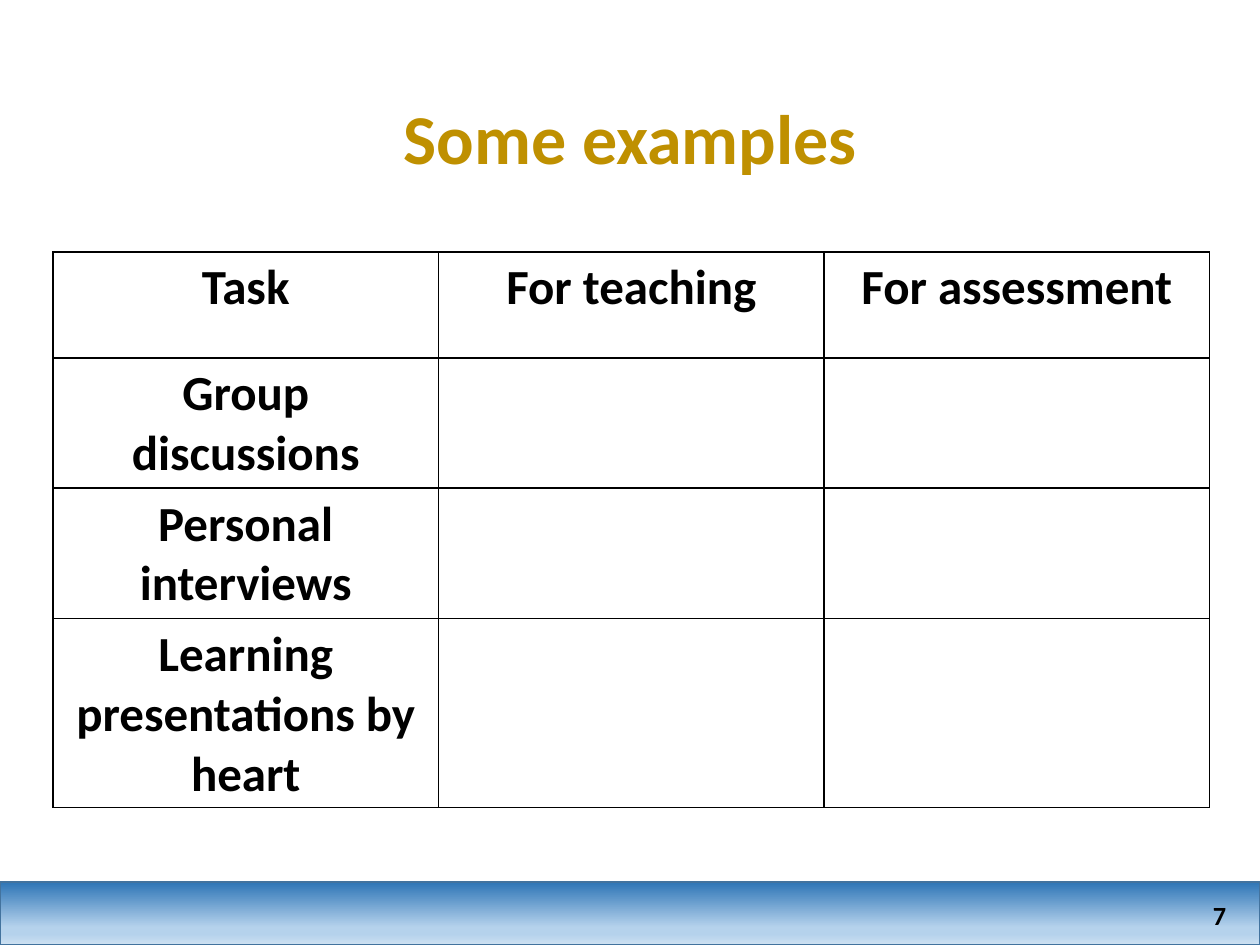
from dataclasses import dataclass

from lxml.etree import SubElement
from pptx import Presentation
from pptx.dml.color import RGBColor
from pptx.enum.shapes import MSO_SHAPE as Shape
from pptx.enum.text import MSO_ANCHOR as Anchor, PP_ALIGN as Align
from pptx.oxml import parse_xml
from pptx.oxml.ns import nsdecls, qn
from pptx.util import Inches, Pt

BLACK = RGBColor(0x00, 0x00, 0x00)
WHITE = RGBColor(0xFF, 0xFF, 0xFF)
GOLD = RGBColor(0xBF, 0x90, 0x00)
BROWN = RGBColor(0x80, 0x60, 0x00)
EDGE = RGBColor(0x43, 0x73, 0x9E)
BLUE = RGBColor(0x2E, 0x75, 0xB6)
PALE = RGBColor(0xB5, 0xD2, 0xEC)
LIGHT = RGBColor(0xCE, 0xE1, 0xF2)

STOPS = [(0, BLUE), (72, PALE), (83, PALE), (100, LIGHT)]
HEADS = ["Task", "For teaching", "For assessment"]
TASKS = ["Group discussions", "Personal interviews",
         "Learning presentations by heart"]
COL, ROW = Inches(3.06), Inches(0.84)


@dataclass
class Label:
    text: str
    box: tuple
    size: int
    color: RGBColor
    align: Align


TITLE = Label("Some examples", (0.69, 0.4, 8.62, 1.45), 40, GOLD, Align.CENTER)
NUMBER = Label("7", (9.31, 7.08, 0.52, 0.36), 15, BLACK, Align.RIGHT)


def write(para, text: str, size: int, color: RGBColor, align: Align):
    para.alignment = align
    run = para.add_run()
    run.text = text
    look = {"name": "Calibri", "size": Pt(size), "bold": True}
    for key, value in look.items():
        setattr(run.font, key, value)
    run.font.color.rgb = color
    return run


def add_label(slide, label: Label):
    box = slide.shapes.add_textbox(*map(Inches, label.box))
    frame = box.text_frame
    frame.word_wrap = True
    frame.vertical_anchor = Anchor.MIDDLE
    para = frame.paragraphs[0]
    return para, write(para, label.text, label.size, label.color, label.align)


def add_title(slide) -> None:
    para, run = add_label(slide, TITLE)
    para.line_spacing = 0.9
    line = parse_xml(
        f'<a:ln {nsdecls("a")} w="{Pt(0.75)}"><a:solidFill>'
        f'<a:srgbClr val="{BROWN}"/></a:solidFill></a:ln>')
    run.font._element.insert(0, line)


def add_band(slide) -> None:
    band = slide.shapes.add_shape(
        Shape.RECTANGLE, 0, Inches(7), Inches(10), Inches(0.5))
    band.shadow.inherit = False
    band.line.color.rgb = EDGE
    band.line.width = Pt(1)
    band.fill.gradient()
    grad = band._element.spPr.find(qn("a:gradFill"))
    grad.find(qn("a:lin")).set("ang", str(90 * 60000))
    stops = grad.find(qn("a:gsLst"))
    for stop in list(stops):
        stops.remove(stop)
    for place, color in STOPS:
        stop = SubElement(stops, qn("a:gs"), pos=str(place * 1000))
        SubElement(stop, qn("a:srgbClr"), val=str(color))


def add_border(cell) -> None:
    """Rule all four sides; the lines must stand before the fill."""
    props = cell._tc.get_or_add_tcPr()
    for spot, side in enumerate(("lnL", "lnR", "lnT", "lnB")):
        line = parse_xml(
            f'<a:{side} {nsdecls("a")} w="{Pt(1)}"><a:solidFill>'
            f'<a:srgbClr val="{BLACK}"/></a:solidFill></a:{side}>')
        props.insert(spot, line)


def add_grid(slide) -> None:
    rows = [HEADS] + [[task, "", ""] for task in TASKS]
    table = slide.shapes.add_table(
        len(rows), len(HEADS), Inches(0.42), Inches(2),
        COL * len(HEADS), ROW * len(rows)).table
    for col in table.columns:
        col.width = COL
    for row, texts in zip(table.rows, rows):
        row.height = ROW
        for cell, text in zip(row.cells, texts):
            cell.fill.solid()
            cell.fill.fore_color.rgb = WHITE
            add_border(cell)
            if text:
                write(cell.text_frame.paragraphs[0], text, 28, BLACK,
                      Align.CENTER)


def main() -> None:
    deck = Presentation()
    deck.slide_width, deck.slide_height = Inches(10), Inches(7.5)
    slide = deck.slides.add_slide(deck.slide_layouts[6])
    add_band(slide)
    add_title(slide)
    add_grid(slide)
    add_label(slide, NUMBER)
    deck.save("out.pptx")


if __name__ == "__main__":
    main()
